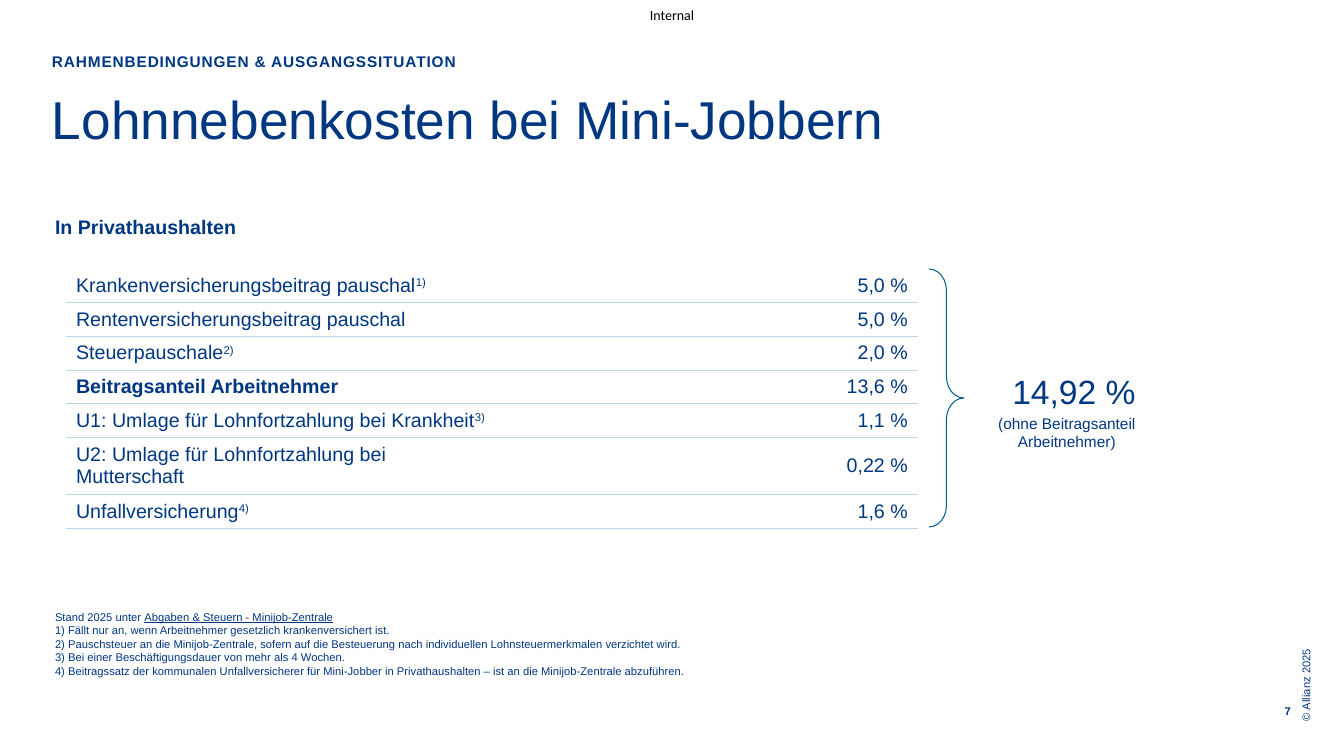
"""Builds the slide on ancillary wage costs for mini-jobbers in private households."""
from dataclasses import dataclass

from lxml.etree import SubElement
from pptx import Presentation
from pptx.dml.color import RGBColor as RGB
from pptx.enum.shapes import MSO_SHAPE as SHAPE
from pptx.enum.text import MSO_ANCHOR as ANCHOR, PP_ALIGN as ALIGN
from pptx.oxml.ns import qn
from pptx.util import Emu, Pt

INTERNAL = "Internal"
SECTION = "RAHMENBEDINGUNGEN & AUSGANGSSITUATION"
TITLE = "Lohnnebenkosten bei Mini-Jobbern"
SUBTITLE = "In Privathaushalten"
RATES = [
    ("Krankenversicherungsbeitrag pauschal", "1)", "5,0 %"),
    ("Rentenversicherungsbeitrag pauschal", "", "5,0 %"),
    ("Steuerpauschale", "2)", "2,0 %"),
    ("Beitragsanteil Arbeitnehmer", "", "13,6 %"),
    ("U1: Umlage für Lohnfortzahlung bei Krankheit", "3)", "1,1 %"),
    ("U2: Umlage für Lohnfortzahlung bei Mutterschaft", "", "0,22 %"),
    ("Unfallversicherung", "4)", "1,6 %"),
]
BOLD_RATE = "Beitragsanteil Arbeitnehmer"
TWO_LINE_RATE = "U2: Umlage für Lohnfortzahlung bei Mutterschaft"
TOTAL = "14,92 %"
TOTAL_NOTE = ["(ohne Beitragsanteil", "Arbeitnehmer)"]
SOURCE = ("Stand 2025 unter ", "Abgaben & Steuern - Minijob-Zentrale")
FOOTNOTES = [
    "1) Fällt nur an, wenn Arbeitnehmer gesetzlich krankenversichert ist.",
    "2) Pauschsteuer an die Minijob-Zentrale, sofern auf die Besteuerung nach individuellen "
    "Lohnsteuermerkmalen verzichtet wird.",
    "3) Bei einer Beschäftigungsdauer von mehr als 4 Wochen.",
    "4) Beitragssatz der kommunalen Unfallversicherer für Mini-Jobber in Privathaushalten – "
    "ist an die Minijob-Zentrale abzuführen.",
]
PAGE = "7"
COPYRIGHT = "© Allianz 2025"


@dataclass(frozen=True)
class Theme:
    """Colours, fonts and type sizes."""
    blue: str = "003781"
    black: str = "000000"
    rule: str = "B5DAE6"
    brace: str = "005F8F"
    font: str = "Arial"
    label_font: str = "Calibri"
    title: int = 38
    total: int = 24
    body: int = 14
    small: int = 11
    label: int = 10
    note: int = 8


T = Theme()
TABLE_X, TABLE_Y, COLUMNS = 66, 269, (432, 420)
ROW_H, TWO_LINE_H = 32, 54


def px(n):
    return Emu(round(n * 914400 / 100.8))


def box(*at):
    return [px(n) for n in at]


def style(p, size, align=ALIGN.LEFT, bold=False, font=T.font, color=T.blue):
    p.alignment = align
    f = p.font
    f.name, f.size, f.bold = font, Pt(size), bold
    f.color.rgb = RGB.from_string(color)


def frame(sp, anchor):
    tf = sp.text_frame
    tf.word_wrap, tf.vertical_anchor = True, anchor
    tf.margin_left = tf.margin_top = tf.margin_right = tf.margin_bottom = 0
    return tf


def add_text(slide, at, lines, size, anchor=ANCHOR.TOP, **look):
    sp = slide.shapes.add_textbox(*box(*at))
    tf = frame(sp, anchor)
    for i, line in enumerate(lines):
        p = tf.add_paragraph() if i else tf.paragraphs[0]
        if line:
            p.add_run().text = line
        style(p, size, **look)
    return sp


def add_border(tcPr, side, visible):
    ln = SubElement(tcPr, qn(f"a:{side}"), w=str(Pt(0.25)))
    if visible:
        SubElement(SubElement(ln, qn("a:solidFill")), qn("a:srgbClr"), val=T.rule)
    else:
        SubElement(ln, qn("a:noFill"))


def add_rates(slide):
    heights = [TWO_LINE_H if name == TWO_LINE_RATE else ROW_H for name, _, _ in RATES]
    at = box(TABLE_X, TABLE_Y, sum(COLUMNS), sum(heights))
    table = slide.shapes.add_table(len(RATES), len(COLUMNS), *at).table
    table.first_row = table.horz_banding = False
    for column, width in zip(table.columns, COLUMNS):
        column.width = px(width)
    for i, (name, mark, rate) in enumerate(RATES):
        table.rows[i].height = px(heights[i])
        label, value = table.rows[i].cells
        for cell in (label, value):
            cell.vertical_anchor = ANCHOR.MIDDLE
            tcPr = cell._tc.get_or_add_tcPr()
            for side, visible in (("lnL", False), ("lnR", False), ("lnT", i > 0), ("lnB", True)):
                add_border(tcPr, side, visible)
            cell.fill.background()
        p = label.text_frame.paragraphs[0]
        p.add_run().text = name
        if mark:
            r = p.add_run()
            r.text = mark
            r._r.get_or_add_rPr().set("baseline", "30000")
        style(p, T.body, bold=name == BOLD_RATE)
        p = value.text_frame.paragraphs[0]
        p.add_run().text = rate
        style(p, T.body, ALIGN.RIGHT)


def add_brace(slide):
    sp = slide.shapes.add_shape(SHAPE.RIGHT_BRACE, *box(929, TABLE_Y, 35, 258))
    sp.shadow.inherit = False
    sp.adjustments[0], sp.adjustments[1] = 0.61, 0.5
    sp.fill.background()
    sp.line.color.rgb = RGB.from_string(T.brace)
    sp.line.width = Pt(0.75)


def add_title(slide):
    sp = slide.shapes.title
    sp.left, sp.top, sp.width, sp.height = box(52, 97, 1084, 101)
    p = frame(sp, ANCHOR.TOP).paragraphs[0]
    p.add_run().text = TITLE
    p.line_spacing = Pt(T.title)
    style(p, T.title)


def add_footnotes(slide):
    tf = add_text(slide, (55, 610, 890, 70), ["", *FOOTNOTES], T.note).text_frame
    plain, underlined = (tf.paragraphs[0].add_run() for _ in SOURCE)
    plain.text, underlined.text = SOURCE
    underlined.font.underline = True
    for p in tf.paragraphs:
        p.line_spacing = Pt(9.6)


def main():
    prs = Presentation()
    prs.slide_width, prs.slide_height = box(1344, 756)
    slide = prs.slides.add_slide(prs.slide_layouts[5])
    add_title(slide)
    add_text(slide, (635, 0, 74, 30), [INTERNAL], T.label, ANCHOR.MIDDLE,
             align=ALIGN.CENTER, font=T.label_font, color=T.black)
    section = add_text(slide, (52, 52, 1028, 28), [SECTION], T.small, bold=True)
    section.text_frame.paragraphs[0].runs[0]._r.get_or_add_rPr().set("spc", "60")
    add_text(slide, (55, 215, 890, 26), [SUBTITLE], T.body, bold=True)
    add_rates(slide)
    add_brace(slide)
    add_text(slide, (994, 371, 160, 40), [TOTAL], T.total, align=ALIGN.CENTER)
    add_text(slide, (987, 414, 160, 36), TOTAL_NOTE, T.small, align=ALIGN.CENTER)
    add_footnotes(slide)
    add_text(slide, (1261, 703, 30, 16), [PAGE], T.note, ANCHOR.MIDDLE,
             align=ALIGN.RIGHT, bold=True)
    add_text(slide, (1256, 663, 100, 16), [COPYRIGHT], T.note, ANCHOR.MIDDLE).rotation = 270
    prs.save("out.pptx")


if __name__ == "__main__":
    main()
